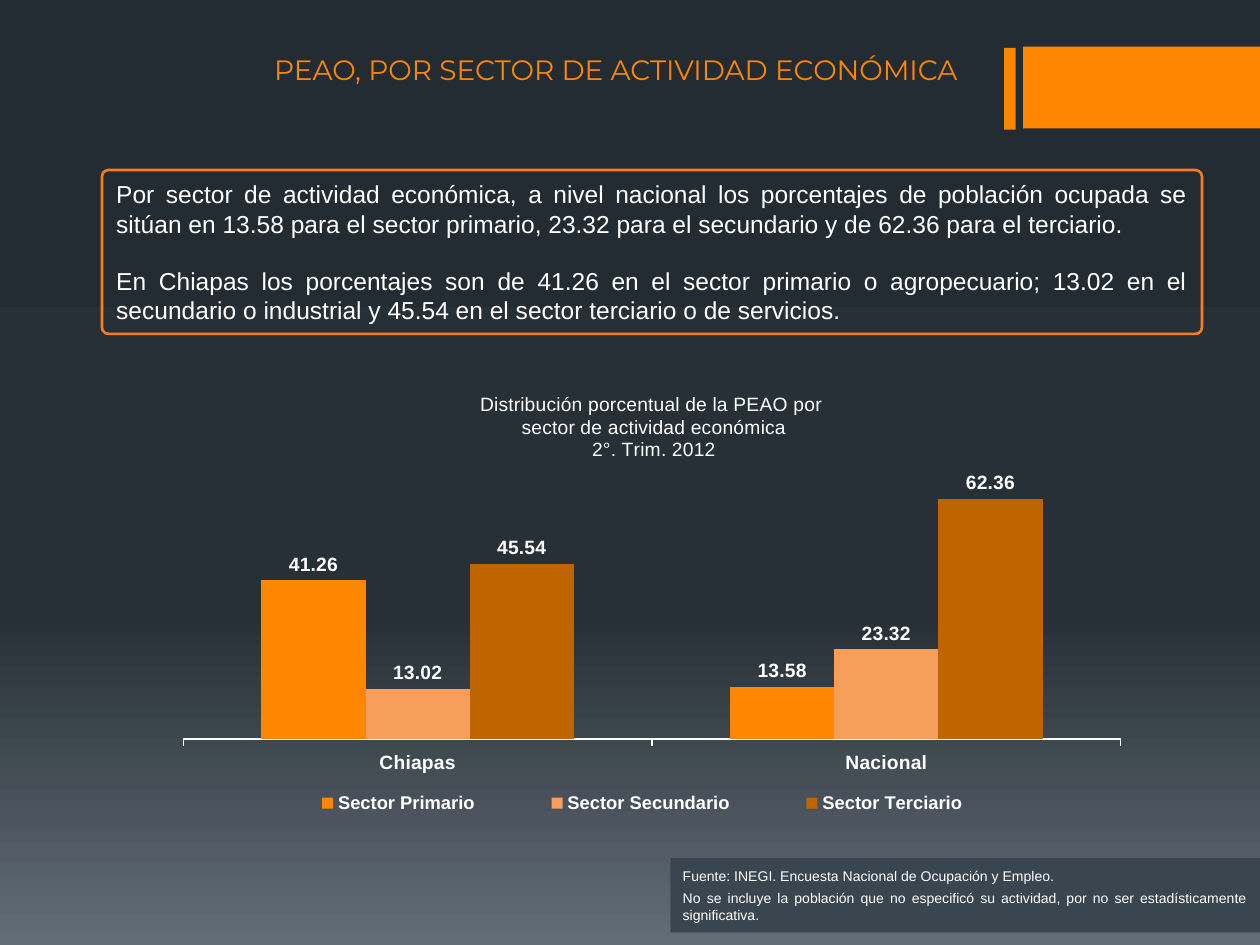
from copy import deepcopy
from dataclasses import dataclass

from lxml import etree
from pptx import Presentation
from pptx import util as u
from pptx.chart.data import CategoryChartData
from pptx.dml.color import RGBColor
from pptx.enum import chart as charts
from pptx.enum import shapes, text
from pptx.oxml.ns import qn

COLORS = {
    "orange": "FF8600",
    "peach": "F69E5C",
    "brown": "BF6500",
    "border": "FF7C19",
    "panel": "394650",
    "white": "FFFFFF",
    "top": "242C33",
    "middle": "273037",
    "bottom": "636D76",
}
BACKGROUND_STOPS = ((0, "top"), (0.65, "middle"), (1, "bottom"))


@dataclass
class Box:
    left: float
    top: float
    width: float
    height: float

    def lengths(self) -> list:
        return [u.Inches(value) for value in (self.left, self.top, self.width, self.height)]


@dataclass
class Panel:
    box: Box
    fill: str | None = None
    line: str | None = None
    corner: float | None = None


@dataclass
class Sector:
    name: str
    values: tuple
    color: str


ACCENTS = (
    Panel(Box(7.97, 0.38, 0.09, 0.65), fill="orange"),
    Panel(Box(8.12, 0.37, 1.88, 0.65), fill="orange"),
)
SUMMARY = Panel(Box(0.81, 1.35, 8.73, 1.3), line="border", corner=0.039)
SOURCE = Panel(Box(5.32, 6.81, 4.68, 0.59), fill="panel")
TITLE_BOX = Box(1.95, 0.37, 5.88, 0.64)
CHART_BOX = Box(1.3, 2.89, 7.75, 3.63)
SECTORS = (
    Sector("Sector Primario", (41.26, 13.58), "orange"),
    Sector("Sector Secundario", (13.02, 23.32), "peach"),
    Sector("Sector Terciario", (45.54, 62.36), "brown"),
)


def rgb(name: str) -> RGBColor:
    return RGBColor.from_string(COLORS[name])


def style_font(font, size: float, bold: bool = False, color: str = "white", name: str = "Arial") -> None:
    font.size = u.Pt(size)
    font.bold = bold
    font.name = name
    font.color.rgb = rgb(color)


def write_text(frame, content: str, *, size: float, color: str = "white", name: str = "Arial",
               align=text.PP_ALIGN.JUSTIFY, anchor=text.MSO_ANCHOR.MIDDLE, gap: float = 0) -> None:
    frame.word_wrap = True
    frame.vertical_anchor = anchor
    frame.text = content
    for paragraph in frame.paragraphs:
        paragraph.alignment = align
        for run in paragraph.runs:
            style_font(run.font, size, color=color, name=name)
    for paragraph in frame.paragraphs[:-1]:
        paragraph.space_after = u.Pt(gap)


def paint_background(slide) -> None:
    fill = slide.background.fill
    fill.gradient()
    fill.gradient_angle = 270
    stop_list = fill.gradient_stops[0]._gs.getparent()
    stop_list.append(deepcopy(stop_list[-1]))
    for stop, (position, color) in zip(fill.gradient_stops, BACKGROUND_STOPS):
        stop.position = position
        stop.color.rgb = rgb(color)


def add_panel(slide, panel: Panel):
    kind = shapes.MSO_SHAPE.ROUNDED_RECTANGLE if panel.corner else shapes.MSO_SHAPE.RECTANGLE
    shape = slide.shapes.add_shape(kind, *panel.box.lengths())
    shape.shadow.inherit = False
    if panel.corner:
        shape.adjustments[0] = panel.corner
    if panel.fill:
        shape.fill.solid()
        shape.fill.fore_color.rgb = rgb(panel.fill)
    else:
        shape.fill.background()
    if panel.line:
        shape.line.color.rgb = rgb(panel.line)
        shape.line.width = u.Pt(1.5)
    else:
        shape.line.fill.background()
    return shape


def set_layout(element, inner: bool = False, **fractions: float) -> None:
    for old in element.findall(qn("c:layout")):
        element.remove(old)
    layout = etree.Element(qn("c:layout"))
    manual = etree.SubElement(layout, qn("c:manualLayout"))
    settings = [("layoutTarget", "inner")] if inner else []
    settings += [("xMode", "edge"), ("yMode", "edge"), *fractions.items()]
    for tag, value in settings:
        etree.SubElement(manual, qn(f"c:{tag}")).set("val", str(value))
    leading = (qn("c:tx"), qn("c:legendPos"))
    element.insert(sum(child.tag in leading for child in element), layout)


def add_sector_chart(slide) -> None:
    data = CategoryChartData(number_format="0.00")
    data.categories = ["Chiapas", "Nacional"]
    for sector in SECTORS:
        data.add_series(sector.name, sector.values)
    chart = slide.shapes.add_chart(
        charts.XL_CHART_TYPE.COLUMN_CLUSTERED, *CHART_BOX.lengths(), data).chart
    style_font(chart.font, 14)

    chart.has_title = True
    write_text(chart.chart_title.text_frame,
               "Distribución porcentual de la PEAO por \nsector de actividad económica\n2°. Trim. 2012",
               size=11, align=text.PP_ALIGN.CENTER)
    chart.chart_title.include_in_layout = False

    chart.has_legend = True
    chart.legend.position = charts.XL_LEGEND_POSITION.BOTTOM
    chart.legend.include_in_layout = False
    style_font(chart.legend.font, 10.5, bold=True)

    category_axis = chart.category_axis
    category_axis.major_tick_mark = charts.XL_TICK_MARK.OUTSIDE
    category_axis.format.line.color.rgb = rgb("white")
    style_font(category_axis.tick_labels.font, 11, bold=True)
    value_axis = chart.value_axis
    value_axis.minimum_scale = 0
    value_axis.maximum_scale = 70
    value_axis.has_major_gridlines = False
    value_axis.visible = False

    plot = chart.plots[0]
    plot.gap_width = 150
    plot.overlap = 0
    plot.vary_by_categories = False
    for series, sector in zip(plot.series, SECTORS):
        series.format.fill.solid()
        series.format.fill.fore_color.rgb = rgb(sector.color)
        labels = series.data_labels
        labels.show_value = True
        labels.number_format = "0.00"
        labels.number_format_is_linked = False
        labels.position = charts.XL_LABEL_POSITION.OUTSIDE_END
        style_font(labels.font, 11, bold=True)

    root = chart._chartSpace.find(qn("c:chart"))
    set_layout(root.find(qn("c:title")), x=0.32, y=0.05)
    set_layout(root.find(qn("c:plotArea")), inner=True, x=0.02, y=0.23, w=0.96, h=0.59)
    set_layout(root.find(qn("c:legend")), x=0.09, y=0.92, w=0.8, h=0.08)


def main() -> None:
    presentation = Presentation()
    presentation.slide_width = u.Inches(10)
    presentation.slide_height = u.Inches(7.5)
    slide = presentation.slides.add_slide(presentation.slide_layouts[6])
    paint_background(slide)
    for accent in ACCENTS:
        add_panel(slide, accent)
    write_text(
        add_panel(slide, SUMMARY).text_frame,
        "Por sector de actividad económica, a nivel nacional los porcentajes de población ocupada se "
        "sitúan en 13.58 para el sector primario, 23.32 para el secundario y de 62.36 para el terciario.\n"
        "En Chiapas los porcentajes son de 41.26 en el sector primario o agropecuario; 13.02 en el "
        "secundario o industrial y 45.54 en el sector terciario o de servicios.",
        size=14, gap=16)
    write_text(
        add_panel(slide, SOURCE).text_frame,
        "Fuente: INEGI. Encuesta Nacional de Ocupación y Empleo.\n"
        "No se incluye la población que no especificó su actividad, por no ser estadísticamente significativa.",
        size=8, gap=3)
    write_text(slide.shapes.add_textbox(*TITLE_BOX.lengths()).text_frame,
               "PEAO, POR SECTOR DE ACTIVIDAD ECONÓMICA", size=16, color="orange",
               name="Montserrat", align=text.PP_ALIGN.CENTER, anchor=text.MSO_ANCHOR.TOP)
    add_sector_chart(slide)
    presentation.save("out.pptx")


if __name__ == "__main__":
    main()
